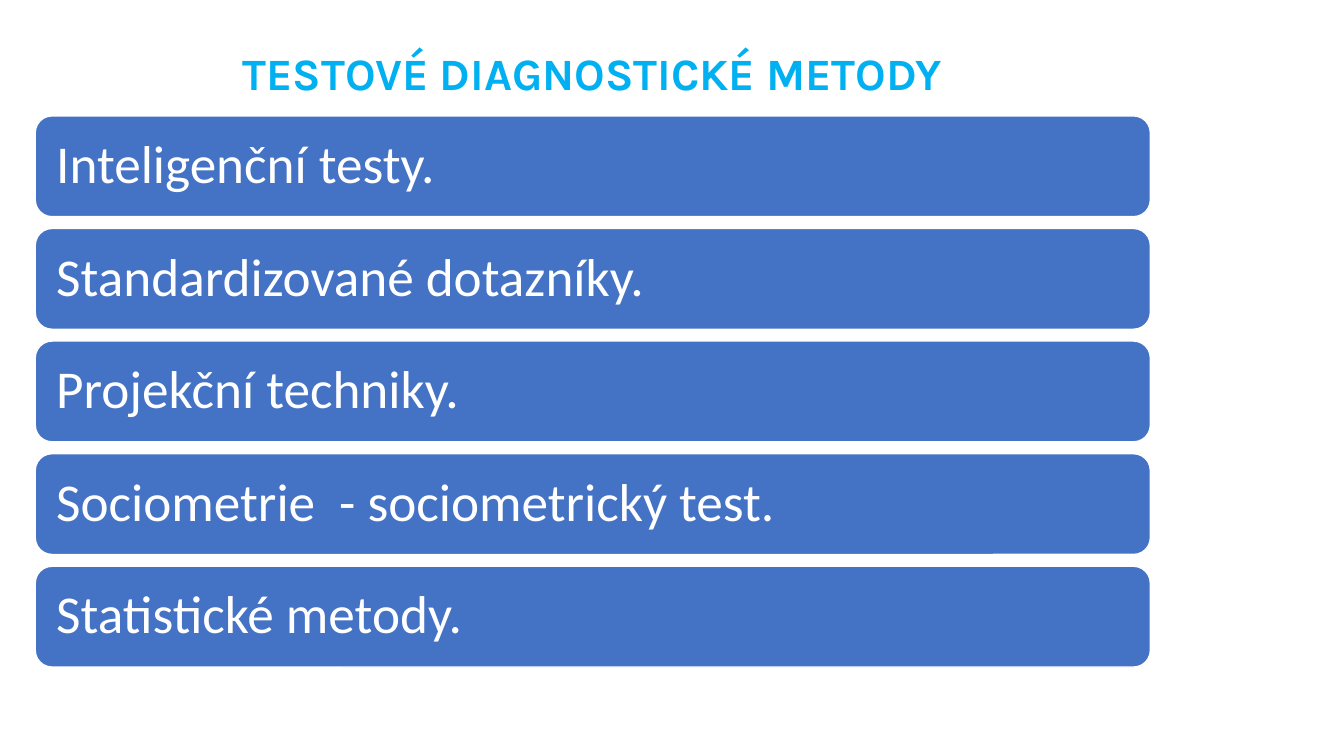
"""Build a slide that lists test-based diagnostic methods as stacked bars."""
from pptx import Presentation
from pptx.dml.color import RGBColor
from pptx.enum.shapes import MSO_SHAPE
from pptx.enum.text import MSO_ANCHOR, PP_ALIGN
from pptx.util import Inches, Pt

SKY = RGBColor(0x00, 0xB0, 0xF0)
BLUE = RGBColor(0x44, 0x72, 0xC4)
WHITE = RGBColor(0xFF, 0xFF, 0xFF)

LEFT, WIDTH = 0.35, 11.06
BAR_TOP, BAR_HEIGHT, BAR_STEP = 1.15, 1, 1.117
METHODS = [
    "Inteligenční testy.",
    "Standardizované dotazníky.",
    "Projekční techniky.",
    "Sociometrie  - sociometrický test.",
    "Statistické metody.",
]


def write_text(box, text, *, font, size, color, bold=False,
               align=PP_ALIGN.LEFT, inset=0.1):
    """Fill a shape with one formatted, vertically centred paragraph."""
    frame = box.text_frame
    frame.word_wrap = True
    frame.vertical_anchor = MSO_ANCHOR.MIDDLE
    frame.margin_left = frame.margin_right = Inches(inset)
    frame.margin_top = frame.margin_bottom = Inches(0.05)
    para = frame.paragraphs[0]
    para.alignment = align
    para.line_spacing = 0.9
    span = para.add_run()
    span.text = text
    span.font.name = font
    span.font.size = Pt(size)
    span.font.bold = bold
    span.font.color.rgb = color


def place_title(page, text):
    """Move and format the title placeholder."""
    title = page.shapes.title
    title.left, title.top = Inches(LEFT), Inches(0.4)
    title.width, title.height = Inches(WIDTH), Inches(0.71)
    write_text(title, text, font="Karla", size=32, color=SKY, bold=True,
               align=PP_ALIGN.CENTER)


def add_bar(page, top, text):
    """Add one rounded bar with its label."""
    bar = page.shapes.add_shape(
        MSO_SHAPE.ROUNDED_RECTANGLE, Inches(LEFT), Inches(top),
        Inches(WIDTH), Inches(BAR_HEIGHT))
    bar.shadow.inherit = False
    bar.fill.solid()
    bar.fill.fore_color.rgb = BLUE
    bar.line.color.rgb = WHITE
    bar.line.width = Pt(1)
    write_text(bar, text, font="Calibri", size=38, color=WHITE, inset=0.16)


def main():
    """Create the deck and save it."""
    deck = Presentation()
    deck.slide_width, deck.slide_height = Inches(13.33), Inches(7.5)
    page = deck.slides.add_slide(deck.slide_layouts[5])
    place_title(page, "TESTOVÉ DIAGNOSTICKÉ METODY")
    for index, method in enumerate(METHODS):
        add_bar(page, BAR_TOP + index * BAR_STEP, method)
    deck.save("out.pptx")


if __name__ == "__main__":
    main()
